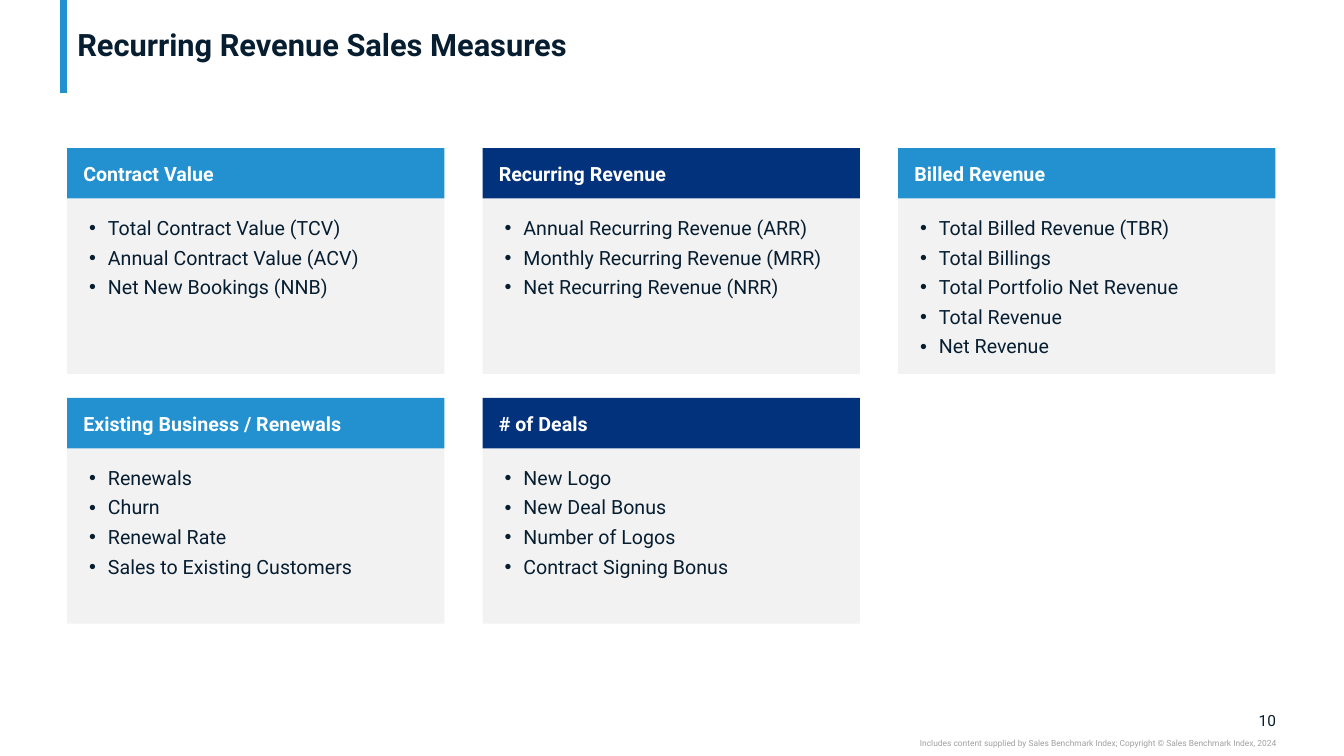
from lxml.etree import SubElement
from pptx import Presentation
from pptx.dml.color import RGBColor
from pptx.enum.shapes import MSO_CONNECTOR as CONNECTOR, MSO_SHAPE as SHAPE
from pptx.enum.text import MSO_ANCHOR as ANCHOR, PP_ALIGN as ALIGN
from pptx.oxml.ns import qn
from pptx.util import Pt

BLUE, NAVY, INK, PALE, GREY, WHITE = "2391CF", "03327C", "071E31", "F2F2F2", "A0A0A0", "FFFFFF"


def colour(value):
    return RGBColor.from_string(value)


def write(shape, lines, size, ink, bold=False, align=ALIGN.LEFT, anchor=ANCHOR.TOP,
          inset=(0, 0), bullets=False):
    frame = shape.text_frame
    frame.word_wrap = True
    frame.vertical_anchor = anchor
    frame.margin_left = frame.margin_right = Pt(inset[0])
    frame.margin_top = frame.margin_bottom = Pt(inset[1])
    frame.text = "\n".join(lines)
    for paragraph in frame.paragraphs:
        paragraph.alignment = align
        if bullets:
            paragraph.level = 1
            props = paragraph._p.get_or_add_pPr()
            props.set("marL", str(Pt(13.5)))
            props.set("indent", str(-Pt(13.5)))
            SubElement(props, qn("a:buFont"), typeface="Arial")
            SubElement(props, qn("a:buChar"), char="•")
            paragraph.line_spacing = 0.9
            paragraph.space_after = Pt(6)
        font = paragraph.font
        font.name, font.size, font.bold = "Roboto", Pt(size), bold
        font.color.rgb = colour(ink)


deck = Presentation()
deck.slide_width, deck.slide_height = Pt(960), Pt(540)
slide = deck.slides.add_slide(deck.slide_layouts[5])
shapes = slide.shapes

# Accent line beside the title
accent = shapes.add_connector(CONNECTOR.STRAIGHT, Pt(45.5), Pt(0), Pt(45.5), Pt(66.4))
accent.line.color.rgb = colour(BLUE)
accent.line.width = Pt(5)
SubElement(accent._element.spPr, qn("a:effectLst"))

# Title
title = shapes.title
title.left, title.top, title.width, title.height = Pt(48), Pt(3), Pt(863.5), Pt(60.5)
write(title, ["Recurring Revenue Sales Measures"], 22, INK, bold=True,
      anchor=ANCHOR.MIDDLE, inset=(7.2, 0))
title.text_frame.paragraphs[0].line_spacing = 0.9

# Cards: column, row, heading, measures
cards = [
    (0, 0, "Contract Value",
     ["Total Contract Value (TCV)", "Annual Contract Value (ACV)", "Net New Bookings (NNB)"]),
    (1, 0, "Recurring Revenue",
     ["Annual Recurring Revenue (ARR)", "Monthly Recurring Revenue (MRR)",
      "Net Recurring Revenue (NRR)"]),
    (2, 0, "Billed Revenue",
     ["Total Billed Revenue (TBR)", "Total Billings", "Total Portfolio Net Revenue",
      "Total Revenue", "Net Revenue"]),
    (0, 1, "Existing Business / Renewals",
     ["Renewals", "Churn", "Renewal Rate", "Sales to Existing Customers"]),
    (1, 1, "# of Deals",
     ["New Logo", "New Deal Bonus", "Number of Logos", "Contract Signing Bonus"]),
]
card_width, heading_height, body_height = 269.5, 36, 125.3
for column, row, heading, measures in cards:
    left = 48 + 296.8 * column
    top = 105.8 + 178.5 * row
    body_top = top + heading_height

    body = shapes.add_shape(SHAPE.RECTANGLE, Pt(left), Pt(body_top),
                            Pt(card_width), Pt(body_height))
    header = shapes.add_shape(SHAPE.RECTANGLE, Pt(left), Pt(top),
                              Pt(card_width), Pt(heading_height))
    for panel, fill in ((body, PALE), (header, NAVY if column == 1 else BLUE)):
        panel.shadow.inherit = False
        panel.fill.solid()
        panel.fill.fore_color.rgb = colour(fill)
        panel.line.fill.background()
    write(header, [heading], 14, WHITE, bold=True, anchor=ANCHOR.MIDDLE, inset=(11.5, 3))

    measure_list = shapes.add_textbox(Pt(left + 15.6), Pt(body_top + 14.3),
                                      Pt(238.3), Pt(21.2 * len(measures) - 6))
    write(measure_list, measures, 14, INK, bullets=True)

# Page number and copyright line
page_number = shapes.add_textbox(Pt(887), Pt(507.6), Pt(24.5), Pt(13.4))
write(page_number, ["10"], 11, INK, align=ALIGN.RIGHT, anchor=ANCHOR.MIDDLE)
copyright_line = shapes.add_textbox(Pt(540), Pt(527), Pt(371.5), Pt(7.3))
write(copyright_line,
      ["Includes content supplied by Sales Benchmark Index; "
       "Copyright © Sales Benchmark Index, 2024"], 6, GREY, align=ALIGN.RIGHT)

deck.save("out.pptx")
